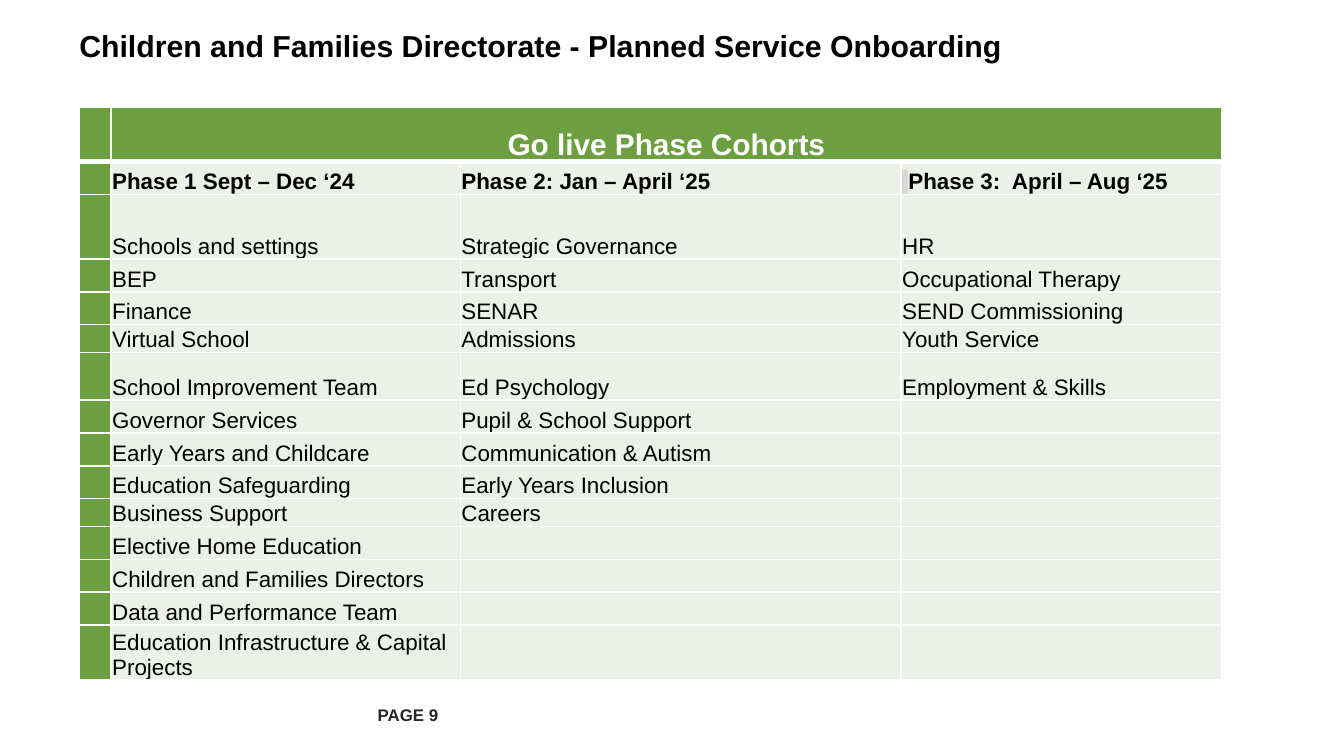
import pptx
import pptx.util
import pptx.enum.text
from pptx.dml.color import RGBColor
from pptx.oxml.ns import qn
from lxml import etree

Cm, Pt = pptx.util.Cm, pptx.util.Pt
ALIGN = pptx.enum.text.PP_ALIGN
ANCHOR = pptx.enum.text.MSO_ANCHOR

HUES = {"green": "6D9F40", "pale": "EBF0E8", "white": "FFFFFF",
        "black": "000000", "dark": "262626", "mark": "D9D9D9"}
FORMS = {
    "title": {"size": Pt(16.2), "bold": True, "hue": "black"},
    "page": {"size": Pt(9), "bold": True, "hue": "dark"},
    "head": {"size": Pt(16), "bold": True, "hue": "white"},
    "phase": {"size": Pt(12), "bold": True, "hue": "black"},
    "team": {"size": Pt(12), "bold": False, "hue": "black"},
}
PHASES = {
    "Phase 1 Sept – Dec ‘24": [
        "Schools and settings", "BEP", "Finance", "Virtual School",
        "School Improvement Team", "Governor Services",
        "Early Years and Childcare", "Education Safeguarding",
        "Business Support", "Elective Home Education",
        "Children and Families Directors", "Data and Performance Team",
        "Education Infrastructure & Capital Projects"],
    "Phase 2: Jan – April ‘25": [
        "Strategic Governance", "Transport", "SENAR", "Admissions",
        "Ed Psychology", "Pupil & School Support",
        "Communication & Autism", "Early Years Inclusion", "Careers"],
    "Phase 3:  April – Aug ‘25": [
        "HR", "Occupational Therapy", "SEND Commissioning",
        "Youth Service", "Employment & Skills"],
}
WIDTHS = [0.6, 6.6, 8.33, 6.06]
ROW = 0.62
TALL = {0: 0.94, 2: 1.22, 5: 0.49, 6: 0.9, 10: 0.49, 14: 0.93}


def style(item, form):
    for key, value in form.items():
        setattr(item, key, value)


def write(para, text, kind):
    run = para.add_run()
    run.text = text
    form = dict(FORMS[kind], name="Arial")
    run.font.color.rgb = RGBColor.from_string(HUES[form.pop("hue")])
    style(run.font, form)
    return run


def mark(run):
    fill = run.font._element.find(qn("a:solidFill"))
    light = etree.Element(qn("a:highlight"))
    etree.SubElement(light, qn("a:srgbClr"), val=HUES["mark"])
    fill.addnext(light)


def label(slide, box, text, kind):
    frame = slide.shapes.add_textbox(*map(Cm, box)).text_frame
    style(frame, {"word_wrap": True, "vertical_anchor": ANCHOR.MIDDLE,
                  "margin_left": Cm(0.23), "margin_right": Cm(0.23),
                  "margin_top": Cm(0.1), "margin_bottom": Cm(0.1)})
    write(frame.paragraphs[0], text, kind)


def border(cell, row):
    props = cell._tc.get_or_add_tcPr()
    wide = {"lnT": row == 1, "lnB": row == 0}
    for side in ("lnL", "lnR", "lnT", "lnB"):
        size = Pt(3 if wide.get(side) else 1)
        line = etree.SubElement(props, qn("a:" + side), w=str(size))
        fill = etree.SubElement(line, qn("a:solidFill"))
        etree.SubElement(fill, qn("a:srgbClr"), val=HUES["white"])


def paint(cell, row, col):
    border(cell, row)
    hue = "green" if row == 0 or col == 0 else "pale"
    cell.fill.solid()
    cell.fill.fore_color.rgb = RGBColor.from_string(HUES[hue])
    style(cell, {"vertical_anchor": ANCHOR.BOTTOM, "margin_left": Cm(0.02),
                 "margin_right": Cm(0.02), "margin_top": Cm(0.02),
                 "margin_bottom": 0})


def cohorts(slide, box):
    count = 2 + max(map(len, PHASES.values()))
    table = slide.shapes.add_table(count, len(WIDTHS), *map(Cm, box)).table
    for col, width in enumerate(WIDTHS):
        table.columns[col].width = Cm(width)
    for row in range(count):
        table.rows[row].height = Cm(TALL.get(row, ROW))
    texts = {(0, 1): "Go live Phase Cohorts"}
    for col, (phase, teams) in enumerate(PHASES.items(), 1):
        for row, text in enumerate([phase, *teams], 1):
            texts[row, col] = text
    for row in range(count):
        for col in range(len(WIDTHS)):
            cell = table.cell(row, col)
            paint(cell, row, col)
            para = cell.text_frame.paragraphs[0]
            if (row, col) not in texts:
                etree.SubElement(para._p, qn("a:endParaRPr"), sz="800")
                continue
            if (row, col) == (1, 3):
                mark(write(para, " ", "phase"))
            kind = {0: "head", 1: "phase"}.get(row, "team")
            write(para, texts[row, col], kind)
    table.cell(0, 1).merge(table.cell(0, 3))
    style(table.cell(0, 1).text_frame.paragraphs[0],
          {"alignment": ALIGN.CENTER, "line_spacing": 1.5})


def main():
    deck = pptx.Presentation()
    style(deck, {"slide_width": Cm(25.4), "slide_height": Cm(14.29)})
    slide = deck.slides.add_slide(deck.slide_layouts[6])
    label(slide, (6.91, 13.13, 2.21, 0.76), "PAGE 9", "page")
    label(slide, (1.27, 0.58, 22.86, 0.56),
          "Children and Families Directorate - Planned Service Onboarding",
          "title")
    cohorts(slide, (1.5, 2.02, sum(WIDTHS), 10.56))
    deck.save("out.pptx")


if __name__ == "__main__":
    main()
